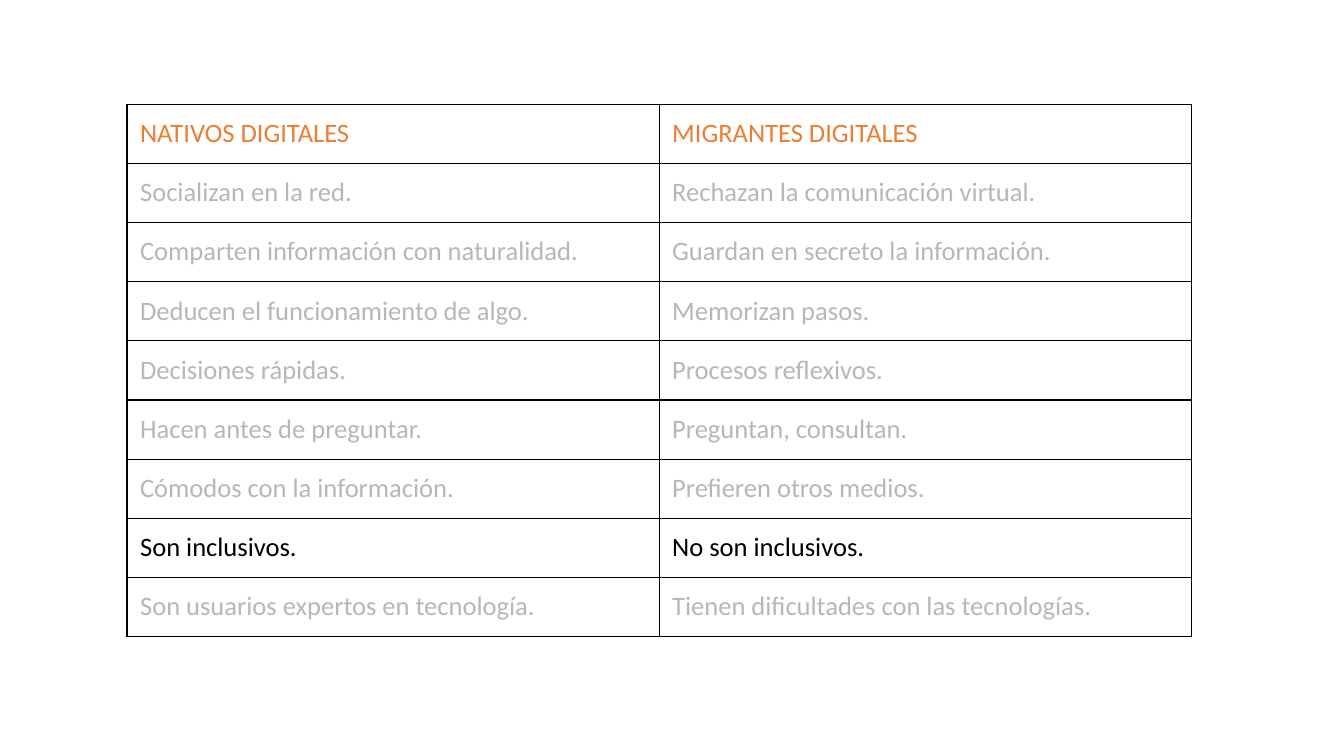
import pptx
import pptx.util
import pptx.dml.color
import lxml.etree
import dataclasses

Cm = pptx.util.Cm
Pt = pptx.util.Pt

ROWS = [
    ("NATIVOS DIGITALES", "MIGRANTES DIGITALES"),
    ("Socializan en la red.", "Rechazan la comunicación virtual."),
    ("Comparten información con naturalidad.", "Guardan en secreto la información."),
    ("Deducen el funcionamiento de algo.", "Memorizan pasos."),
    ("Decisiones rápidas.", "Procesos reflexivos."),
    ("Hacen antes de preguntar.", "Preguntan, consultan."),
    ("Cómodos con la información.", "Prefieren otros medios."),
    ("Son inclusivos.", "No son inclusivos."),
    ("Son usuarios expertos en tecnología.", "Tienen dificultades con las tecnologías."),
]
HEAD, FOCUS = 0, 7


@dataclasses.dataclass(frozen=True)
class Theme:
    font: str = "Calibri"
    size: float = 19
    head: str = "ED7D31"
    focus: str = "000000"
    muted: str = "B7B7B7"
    rule: str = "000000"
    width: float = 1


THEME = Theme()
LEFT, TOP = Cm(3.2), Cm(2.63)
COL, ROW = Cm(13.41), Cm(1.49)
INSET = Cm(0.33)
INK = {HEAD: THEME.head, FOCUS: THEME.focus}


def add_rules(cell):
    """Draw a thin line on all four sides of the cell."""
    props = cell._tc.get_or_add_tcPr()
    space = "{http://schemas.openxmlformats.org/drawingml/2006/main}"
    for side in ("lnL", "lnR", "lnT", "lnB"):
        line = lxml.etree.SubElement(props, space + side, w=str(Pt(THEME.width)))
        fill = lxml.etree.SubElement(line, space + "solidFill")
        lxml.etree.SubElement(fill, space + "srgbClr", val=THEME.rule)


def fill_cell(cell, text, ink):
    add_rules(cell)
    cell.fill.background()
    cell.margin_left = cell.margin_right = INSET
    cell.margin_top = cell.margin_bottom = INSET
    cell.text_frame.text = text
    font = cell.text_frame.paragraphs[0].runs[0].font
    font.name = THEME.font
    font.size = Pt(THEME.size)
    font.bold = False
    font.color.rgb = pptx.dml.color.RGBColor.from_string(ink)


def main():
    deck = pptx.Presentation()
    deck.slide_width, deck.slide_height = Cm(33.87), Cm(19.05)
    slide = deck.slides.add_slide(deck.slide_layouts[6])
    count, cols = len(ROWS), len(ROWS[0])
    frame = slide.shapes.add_table(count, cols, LEFT, TOP, COL * cols, ROW * count)
    table = frame.table
    table.first_row = table.horz_banding = False
    for col in table.columns:
        col.width = COL
    for r, texts in enumerate(ROWS):
        table.rows[r].height = ROW
        for c, text in enumerate(texts):
            fill_cell(table.cell(r, c), text, INK.get(r, THEME.muted))
    deck.save("out.pptx")


if __name__ == "__main__":
    main()
